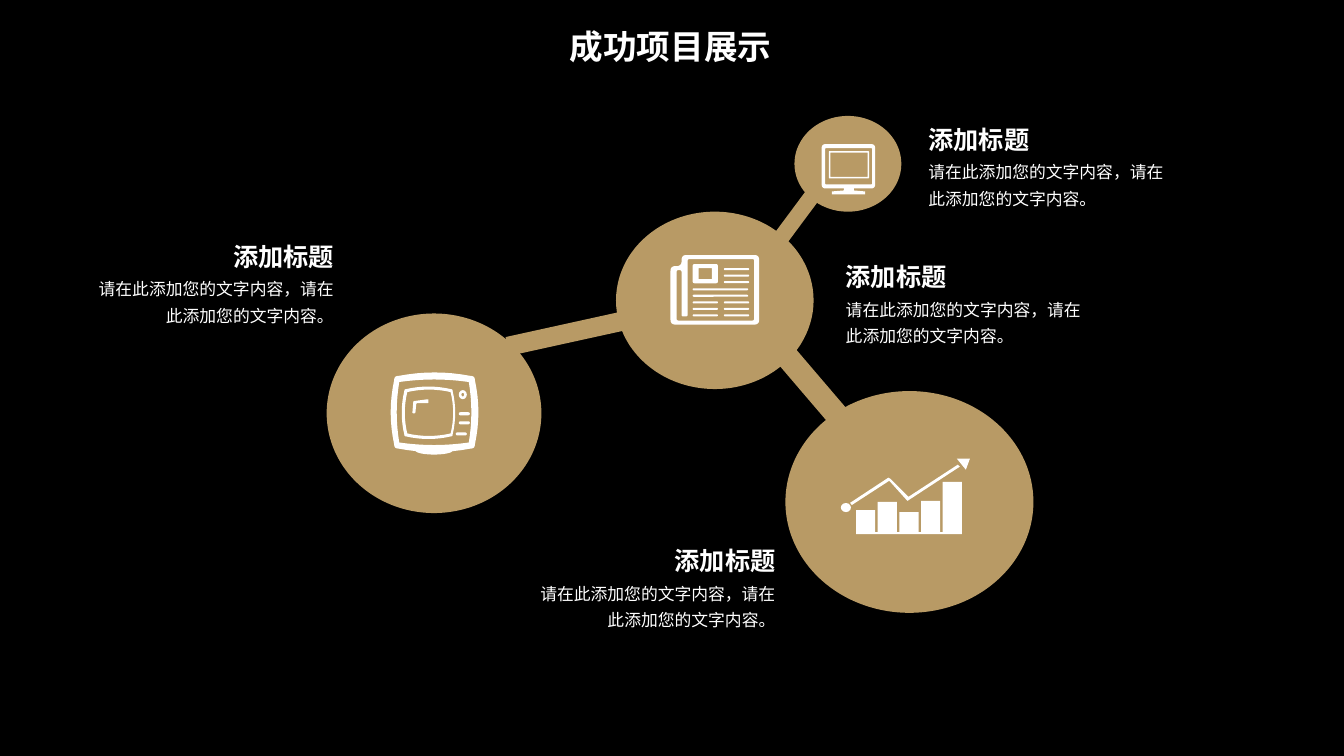
import pptx
import pptx.dml.color
import pptx.enum.shapes
import pptx.enum.text
import pptx.oxml
import pptx.oxml.ns
import pptx.util

COLUMNS, ROWS = 1333, 750
CELL = pptx.util.Inches(7.5) // ROWS
FONT = "Noto Sans CJK SC"
GOLD, WHITE, BLACK = "B89A65", "FFFFFF", "000000"
SHAPE = pptx.enum.shapes.MSO_SHAPE
ALIGN = pptx.enum.text.PP_ALIGN
FIT = pptx.enum.text.MSO_AUTO_SIZE

CIRCLES = [(324, 311, 213, 198), (611, 210, 196, 176),
           (788, 115, 106, 95), (779, 388, 246, 220)]
LINKS = [(753, 372, 106, 23, 229.5), (502, 321, 123, 19, 347.6),
         (758, 206, 66, 16, 306.6)]
CAPTIONS = [(911, 118, ALIGN.LEFT), (829, 254, ALIGN.LEFT),
            (525, 536, ALIGN.RIGHT), (87, 234, ALIGN.RIGHT)]
HEADING = "添加标题"
BODY = "请在此添加您的文字内容，请在此添加您的文字内容。"


def grid(*cells):
    return [pptx.util.Emu(round(n * CELL)) for n in cells]


def paint(fill, color):
    fill.solid()
    fill.fore_color.rgb = pptx.dml.color.RGBColor.from_string(color)


def finish(sp, color):
    paint(sp.fill, color)
    sp.line.fill.background()
    sp.shadow.inherit = False
    return sp


def add_preset(slide, kind, box, color=WHITE, rotation=0):
    sp = finish(slide.shapes.add_shape(kind, *grid(*box)), color)
    sp.rotation = rotation
    return sp


def add_pill(slide, x, y, w, h):
    sp = add_preset(slide, SHAPE.ROUNDED_RECTANGLE, (x, y, w, h))
    sp.adjustments[0] = 0.5


def box_points(x, y, w, h):
    return [(x, y), (x + w, y), (x + w, y + h), (x, y + h)]


def bend(start, control, end, steps=8):
    shares = [i / steps for i in range(steps + 1)]
    return [tuple((1 - t) ** 2 * a + 2 * t * (1 - t) * c + t * t * b
                  for a, c, b in zip(start, control, end)) for t in shares]


def contour(corners, radius=0, bow=0):
    edges = []
    for (x1, y1), (x2, y2) in zip(corners, corners[1:] + corners[:1]):
        length = ((x2 - x1) ** 2 + (y2 - y1) ** 2) ** 0.5
        ux, uy = (x2 - x1) / length, (y2 - y1) / length
        start = (x1 + ux * radius, y1 + uy * radius)
        end = (x2 - ux * radius, y2 - uy * radius)
        middle = ((x1 + x2) / 2 + 2 * bow * uy, (y1 + y2) / 2 - 2 * bow * ux)
        edges.append((start, middle, end))
    points = []
    for i, (start, middle, end) in enumerate(edges):
        points += bend(start, middle, end) if bow else [start, end]
        if radius:
            following = edges[(i + 1) % len(edges)][0]
            points += bend(end, corners[(i + 1) % len(corners)], following)
    return points


def add_outline(slide, *contours):
    builder = None
    for points in contours:
        first, *rest = [grid(*point) for point in points]
        if builder is None:
            builder = slide.shapes.build_freeform(*first)
        else:
            builder.move_to(*first)
        builder.add_line_segments(rest, close=True)
    finish(builder.convert_to_shape(), WHITE)


def write(sp, text, size, align, bold=False, spacing=None):
    tf = sp.text_frame
    p = tf.paragraphs[0]
    p.add_run().text = text
    p.alignment = align
    if spacing:
        p.line_spacing = spacing
    font = p.font
    font.name, font.size, font.bold = FONT, pptx.util.Pt(size), bold
    paint(font.fill, WHITE)
    properties = p._p.pPr.find(pptx.oxml.ns.qn("a:defRPr"))
    east_asian = pptx.oxml.parse_xml(
        f'<a:ea {pptx.oxml.ns.nsdecls("a")} typeface="{FONT}"/>')
    properties.find(pptx.oxml.ns.qn("a:latin")).addnext(east_asian)


def add_text(slide, box, *args, **kwargs):
    sp = slide.shapes.add_textbox(*grid(*box))
    sp.text_frame.word_wrap = True
    sp.text_frame.auto_size = FIT.SHAPE_TO_FIT_TEXT
    write(sp, *args, **kwargs)


def add_caption(slide, x, y, align):
    width, heading_width = 254, 120
    shift = width - heading_width if align == ALIGN.RIGHT else 0
    add_text(slide, (x + shift, y, heading_width, 42), HEADING, 18, align, bold=True)
    add_text(slide, (x, y + 32, width, 62), BODY, 12, align, spacing=1.3)


def set_title(slide, text):
    sp = slide.shapes.title
    sp.left, sp.top, sp.width, sp.height = grid(555, 21, 220, 50)
    tf = sp.text_frame
    tf.margin_left = tf.margin_right = 0
    tf.word_wrap = True
    tf.auto_size = FIT.NONE
    write(sp, text, 24, ALIGN.CENTER, bold=True)


def draw_television(slide):
    add_outline(slide, contour(box_points(391, 373, 80, 72), 4, 3.5),
                contour(box_points(396, 379, 69, 60), 0, 2.5))
    add_preset(slide, SHAPE.OVAL, (412, 443, 37, 8))
    add_outline(slide, contour(box_points(401, 386, 48, 47), 2, 2.5),
                contour(box_points(404, 389, 43, 41), 0, 2.5))
    add_preset(slide, SHAPE.DONUT, (455, 387, 8, 9)).adjustments[0] = 0.33
    for x, y in [(455, 409), (455, 418), (452, 429)]:
        add_pill(slide, x, y, 11, 3)
    add_outline(slide, contour([(410, 398), (425, 396), (425, 400), (413, 400),
                                (412, 410), (409, 410)], 1))


def draw_newspaper(slide):
    add_outline(
        slide,
        contour([(676, 253), (753, 253), (753, 322), (665, 322),
                 (665, 264), (676, 264)], 5),
        contour([(682, 257), (748, 257), (748, 318), (671, 318),
                 (671, 268), (676, 268), (676, 314), (682, 314)], 2))
    add_outline(slide, contour(box_points(687, 262, 25, 19), 2),
                contour(box_points(693, 266, 13, 11)))
    left, right, step = 687, 718, 6.4
    for i in range(3):
        add_pill(slide, right, 266 + i * step, 25, 2)
        for x in (left, right):
            add_pill(slide, x, 299 + i * step, 25, 2)
    for i in range(2):
        add_pill(slide, left, 286 + i * step, 55, 2)


def draw_monitor(slide):
    add_outline(slide, contour(box_points(822, 150, 40, 27), 1),
                contour(box_points(823.5, 151.5, 37, 24)))
    add_outline(slide, contour(box_points(815, 143, 53, 44), 4),
                contour(box_points(818.5, 147, 46.5, 36), 1))
    add_outline(slide, [(837, 186), (847, 186), (847, 189), (858, 190), (858, 193),
                        (825, 193), (825, 190), (837, 189)])


def draw_growth(slide):
    base = 528
    add_preset(slide, SHAPE.RECTANGLE, (849, base, 105, 2))
    for i, height in enumerate([22, 30, 20, 31, 50]):
        add_preset(slide, SHAPE.RECTANGLE,
                   (849 + 21.5 * i, base - height, 19, height))
    add_preset(slide, SHAPE.OVAL, (834, 499, 10, 9))
    add_outline(slide, [(949, 455), (962, 455), (958, 466)])
    add_outline(slide, [(843, 499), (881, 474), (883, 475), (901, 493), (950, 461),
                        (952, 463), (900, 497), (882, 477), (845, 501)])


def main():
    prs = pptx.Presentation()
    prs.slide_width, prs.slide_height = grid(COLUMNS, ROWS)
    slide = prs.slides.add_slide(prs.slide_layouts[5])
    paint(slide.background.fill, BLACK)
    set_title(slide, "成功项目展示")
    for *box, rotation in LINKS:
        add_preset(slide, SHAPE.RECTANGLE, box, GOLD, rotation)
    for box in CIRCLES:
        add_preset(slide, SHAPE.OVAL, box, GOLD)
    for draw in (draw_television, draw_newspaper, draw_monitor, draw_growth):
        draw(slide)
    for caption in CAPTIONS:
        add_caption(slide, *caption)
    prs.save("out.pptx")


if __name__ == "__main__":
    main()
